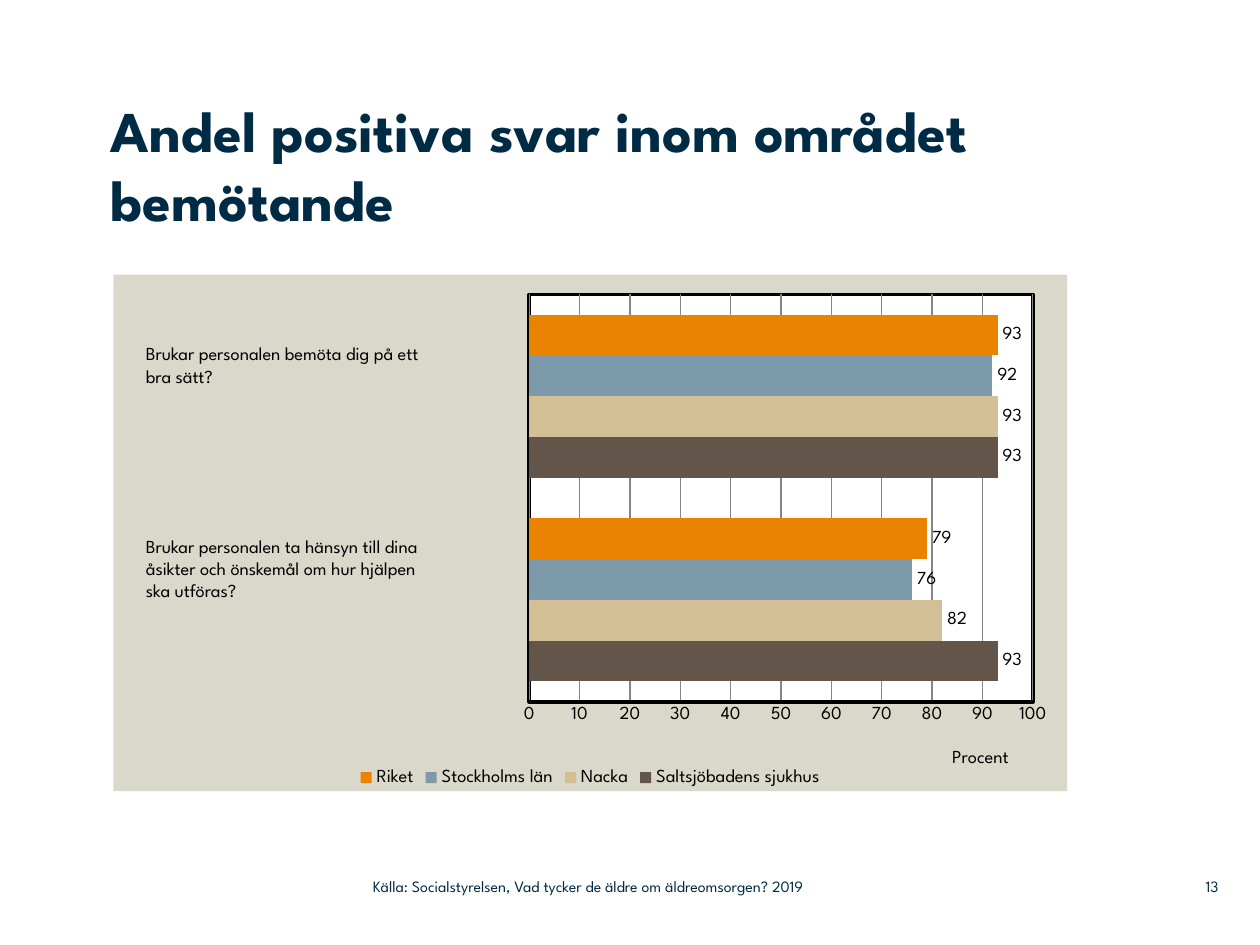
from dataclasses import dataclass

from lxml import etree
from pptx import Presentation
from pptx import util as u
from pptx.chart import data as chart_data
from pptx.dml.color import RGBColor
from pptx.enum import chart as ch, text as t
from pptx.oxml import parse_xml
from pptx.oxml.ns import nsdecls


@dataclass(frozen=True)
class Theme:
    font: str = "League Spartan"
    navy: str = "002B45"
    black: str = "000000"
    white: str = "FFFFFF"
    panel: str = "DAD7CB"
    grid: str = "868686"
    orange: str = "E98300"
    blue: str = "7D9AAA"
    sand: str = "D3BF96"
    brown: str = "635549"
    title: float = 33
    body: float = 10.5
    footer: float = 9


class SlideBuilder:
    COLUMNS, ROWS = 100, 75

    def __init__(self, presentation, theme):
        self.theme = theme
        self.cell_width = presentation.slide_width / self.COLUMNS
        self.cell_height = presentation.slide_height / self.ROWS
        self.slide = presentation.slides.add_slide(presentation.slide_layouts[6])

    def place(self, column, row, columns, rows):
        return (
            u.Emu(round(column * self.cell_width)),
            u.Emu(round(row * self.cell_height)),
            u.Emu(round(columns * self.cell_width)),
            u.Emu(round(rows * self.cell_height)),
        )

    def style(self, font, size, color, bold=False):
        font.name = self.theme.font
        font.size = u.Pt(size)
        font.bold = bold
        font.color.rgb = RGBColor.from_string(color)

    def text(self, area, lines, size, color, bold=False, inset=False,
             anchor=t.MSO_ANCHOR.TOP, align=t.PP_ALIGN.LEFT):
        frame = self.slide.shapes.add_textbox(*self.place(*area)).text_frame
        frame.word_wrap = True
        frame.vertical_anchor = anchor
        if not inset:
            frame.margin_left = frame.margin_right = 0
            frame.margin_top = frame.margin_bottom = 0
        for index, line in enumerate(lines):
            paragraph = frame.add_paragraph() if index else frame.paragraphs[0]
            paragraph.alignment = align
            run = paragraph.add_run()
            run.text = line
            self.style(run.font, size, color, bold)

    def layout(self, **shares):
        target = '<c:layoutTarget val="inner"/>' if "w" in shares else ""
        modes = "".join(f'<c:{key}Mode val="edge"/>' for key in "xy")
        values = "".join(f'<c:{key} val="{value}"/>' for key, value in shares.items())
        return parse_xml(
            f'<c:layout {nsdecls("c")}><c:manualLayout>{target}{modes}{values}'
            "</c:manualLayout></c:layout>"
        )

    def surface(self, fill, line=None, width=0):
        stroke = "<a:noFill/>"
        if line:
            stroke = f'<a:solidFill><a:srgbClr val="{line}"/></a:solidFill>'
        return parse_xml(
            f'<c:spPr {nsdecls("c", "a")}><a:solidFill><a:srgbClr val="{fill}"/>'
            f'</a:solidFill><a:ln w="{u.Pt(width)}">{stroke}</a:ln></c:spPr>'
        )

    def bar_chart(self, area, categories, series, axis_title):
        theme = self.theme
        data = chart_data.CategoryChartData()
        data.categories = categories
        for name, values, _ in series:
            data.add_series(name, values)
        chart = self.slide.shapes.add_chart(
            ch.XL_CHART_TYPE.BAR_CLUSTERED, *self.place(*area), data
        ).chart
        self.style(chart.font, theme.body, theme.black)
        chart.has_title = False
        chart.has_legend = True
        chart.legend.position = ch.XL_LEGEND_POSITION.BOTTOM
        chart.legend.include_in_layout = False
        self.style(chart.legend.font, theme.body, theme.black)
        chart.category_axis.visible = False
        self.bars(chart.plots[0], series)
        self.value_axis(chart.value_axis, axis_title)
        self.backgrounds(chart)

    def bars(self, plot, series):
        plot.gap_width = 100
        plot.overlap = 0
        plot.vary_by_categories = False
        for bars, (_, _, color) in zip(plot.series, series):
            bars.format.fill.solid()
            bars.format.fill.fore_color.rgb = RGBColor.from_string(color)
            labels = bars.data_labels
            labels.show_value = True
            labels.position = ch.XL_LABEL_POSITION.OUTSIDE_END
            self.style(labels.font, self.theme.body, self.theme.black)

    def value_axis(self, axis, title):
        theme = self.theme
        axis.minimum_scale, axis.maximum_scale, axis.major_unit = 0, 100, 10
        axis.major_tick_mark = axis.minor_tick_mark = ch.XL_TICK_MARK.NONE
        self.style(axis.tick_labels.font, theme.body, theme.black)
        axis.has_major_gridlines = True
        for part, color, width in (
            (axis.format, theme.black, 2),
            (axis.major_gridlines.format, theme.grid, 0.75),
        ):
            part.line.color.rgb = RGBColor.from_string(color)
            part.line.width = u.Pt(width)
        run = axis.axis_title.text_frame.paragraphs[0].add_run()
        run.text = title
        self.style(run.font, theme.body, theme.black)
        self.set_layout(axis.axis_title._element, self.layout(x=0.876, y=0.91), 1)

    def set_layout(self, element, layout, position):
        for child in list(element):
            if etree.QName(child).localname == "layout":
                element.remove(child)
        element.insert(position, layout)

    def backgrounds(self, chart):
        theme = self.theme
        space = chart._chartSpace
        plot_area = space.chart.plotArea
        self.set_layout(plot_area, self.layout(x=0.436, y=0.038, w=0.528, h=0.789), 0)
        plot_area.append(self.surface(theme.white, theme.black, 2))
        space.chart.addnext(self.surface(theme.panel))


def main():
    presentation = Presentation()
    presentation.slide_width, presentation.slide_height = u.Inches(10), u.Inches(7.5)
    theme = Theme()
    builder = SlideBuilder(presentation, theme)
    builder.bar_chart(
        (9, 21.8, 75.7, 41),
        ["1", "2"],
        [
            ("Saltsjöbadens sjukhus", (93, 93), theme.brown),
            ("Nacka", (82, 93), theme.sand),
            ("Stockholms län", (76, 92), theme.blue),
            ("Riket", (79, 93), theme.orange),
        ],
        "Procent",
    )
    builder.text((8.8, 7.5, 76, 14.2), ["Andel positiva svar inom området bemötande"],
                 theme.title, theme.navy, bold=True)
    questions = [
        (26.7, 4.5, ["Brukar personalen bemöta dig på ett", "bra sätt?"]),
        (42, 6.3, ["Brukar personalen ta hänsyn till dina",
                   "åsikter och önskemål om hur hjälpen", "ska utföras?"]),
    ]
    for row, rows, lines in questions:
        builder.text((10.6, row, 29.8, rows), lines, theme.body, theme.black, inset=True)
    footers = [
        (92, 4.7, "13", t.PP_ALIGN.RIGHT),
        (29.6, 44.3, "Källa: Socialstyrelsen, Vad tycker de äldre om äldreomsorgen? 2019",
         t.PP_ALIGN.LEFT),
    ]
    for column, columns, line, align in footers:
        builder.text((column, 68.9, columns, 2.9), [line], theme.footer, theme.navy,
                     anchor=t.MSO_ANCHOR.MIDDLE, align=align)
    presentation.save("out.pptx")


if __name__ == "__main__":
    main()
